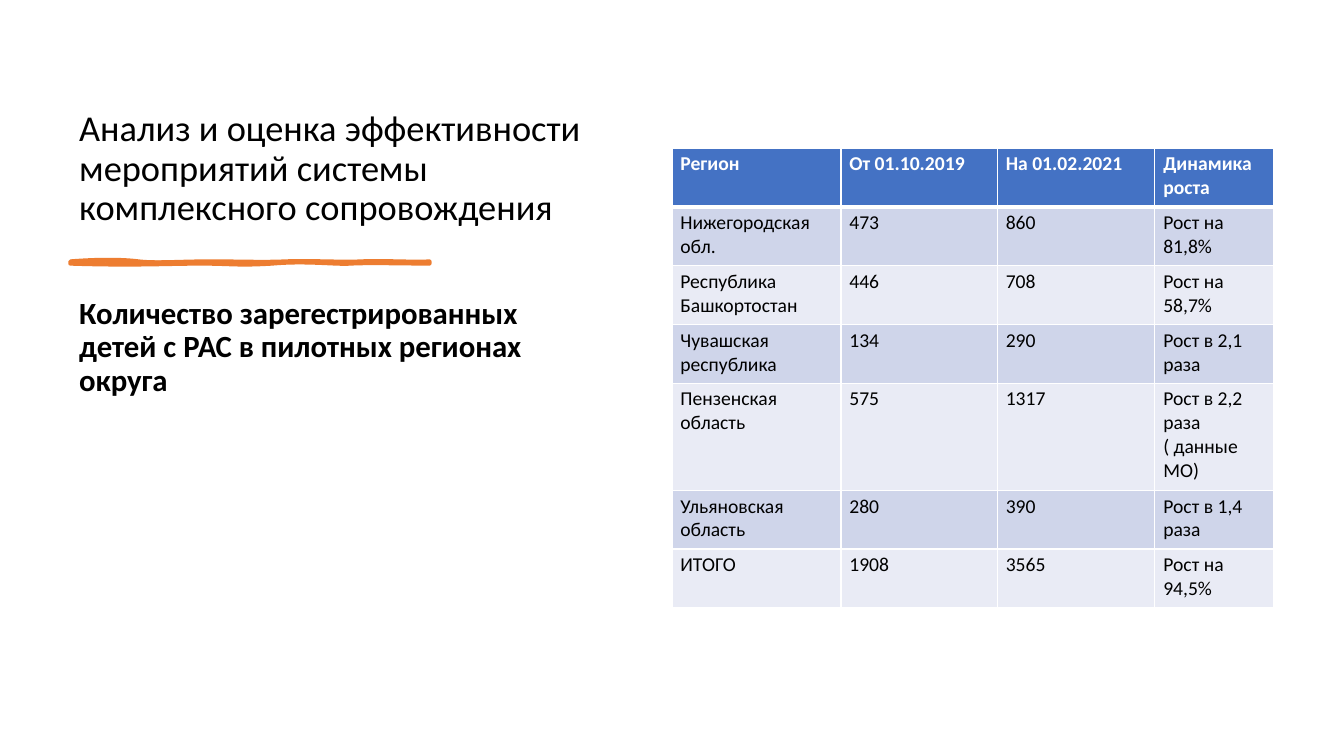
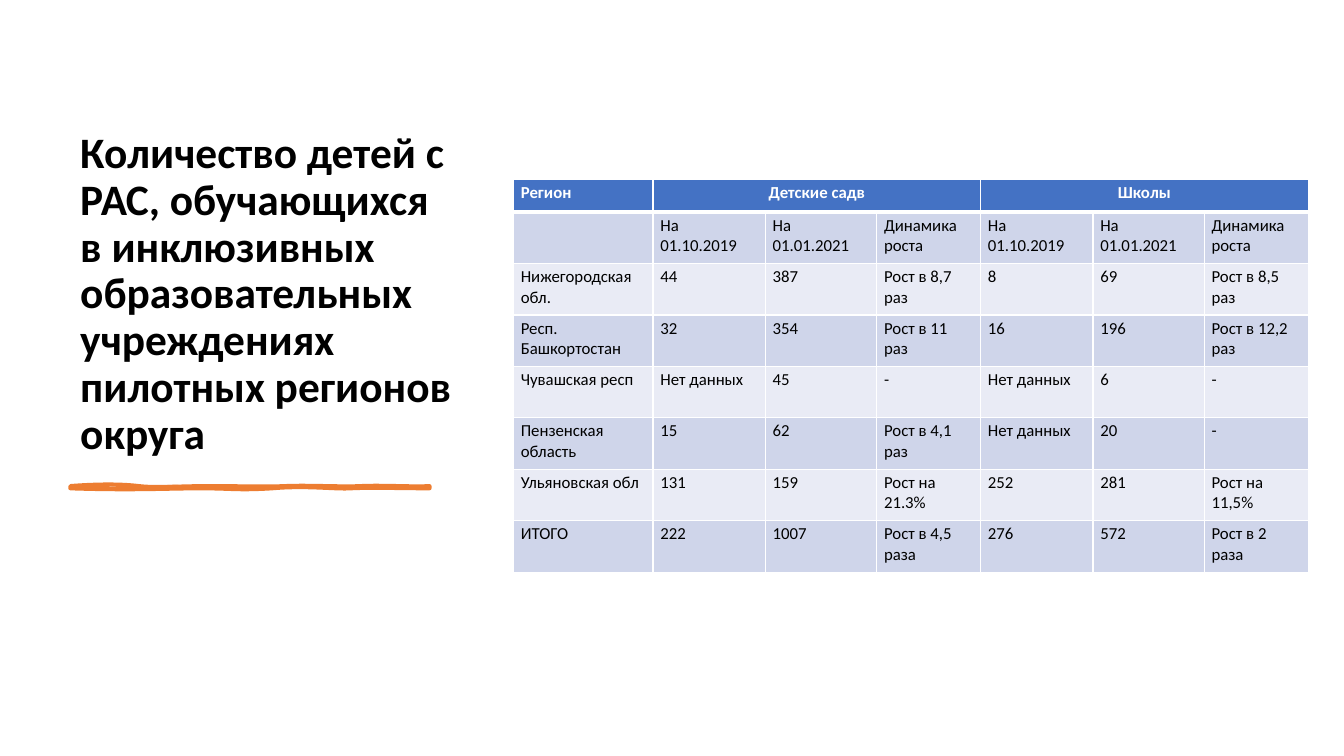
from dataclasses import dataclass

import lxml.etree
import pptx
import pptx.dml.color
import pptx.enum.text
import pptx.oxml.ns
import pptx.presentation
import pptx.slide
import pptx.table
import pptx.util

PX = 9525
FONT = "Calibri"
COLORS = {
    "text": "000000",
    "white": "FFFFFF",
    "accent": "ED7D31",
    "header": "4472C4",
    "band_dark": "CFD5EA",
    "band_light": "E9EBF5",
}

Point = tuple[int, int]
Curve = tuple[int, int, int, int, int, int]


@dataclass(frozen=True)
class Box:
    left: int
    top: int
    width: int
    height: int


@dataclass(frozen=True)
class TextSpec:
    text: str
    box: Box
    size: int
    bold: bool = False
    bottom: bool = False
    space_before: int = 0


@dataclass(frozen=True)
class TableSpec:
    left: int
    top: int
    columns: list[int]
    heights: list[int]
    rows: list[list[str]]
    size: int
    margin_x: int
    margin_y: int
    header_spans: tuple[tuple[int, int], ...] = ()


@dataclass(frozen=True)
class Strand:
    upper: list[Curve]
    lower: list[Curve]
    hidden_part: dict[str, str]


@dataclass(frozen=True)
class SlideSpec:
    texts: list[TextSpec]
    underline_top: int
    table: TableSpec


UNDERLINE_LEFT = 67
UNDERLINE_WIDTH = 342
UNDERLINE_HEIGHT = 2
STRANDS = [
    Strand(
        [(26, -2, 49, -2, 65, 0), (82, 2, 103, 0, 133, 0), (164, 0, 182, 1, 205, 0),
         (228, -1, 258, 1, 277, 0), (297, -1, 328, 1, 342, 0)],
        [(324, 2, 282, 1, 267, 2), (252, 3, 225, -1, 192, 2), (158, 4, 155, 2, 124, 2),
         (92, 2, 60, 4, 0, 2)],
        {"fill": "none"},
    ),
    Strand(
        [(31, 2, 38, 0, 65, 0), (92, -1, 95, -2, 124, 0), (152, 2, 183, 1, 199, 0),
         (214, -1, 247, 3, 263, 0), (280, -2, 314, 3, 342, 0)],
        [(328, 1, 290, 4, 274, 2), (258, -1, 239, 2, 199, 2), (167, 1, 163, 1, 140, 2),
         (118, 3, 105, 1, 72, 2), (39, 2, 21, 1, 0, 2)],
        {"stroke": "0"},
    ),
]

PERIODS = ["На 01.10.2019", "На 01.01.2021", "Динамика роста"]
SLIDES = [
    SlideSpec(
        [
            TextSpec("Анализ и оценка эффективности мероприятий системы комплексного сопровождения",
                     Box(66, 67, 506, 155), 26, bottom=True),
            TextSpec("Количество зарегестрированных детей с РАС в пилотных регионах округа",
                     Box(66, 279, 506, 372), 22, bold=True, space_before=10),
        ],
        249,
        TableSpec(
            640, 141, [161, 149, 150, 113], [56] * 4 + [102] + [56] * 2,
            [
                ["Регион", "От 01.10.2019", "На 01.02.2021", "Динамика роста"],
                ["Нижегородская обл.", "473", "860", "Рост на 81,8%"],
                ["Республика Башкортостан", "446", "708", "Рост на 58,7%"],
                ["Чувашская республика", "134", "290", "Рост в 2,1 раза"],
                ["Пензенская область", "575", "1317", "Рост в 2,2 раза ( данные МО)"],
                ["Ульяновская область", "280", "390", "Рост в 1,4 раза"],
                ["ИТОГО", "1908", "3565", "Рост на 94,5%"],
            ],
            14, 8, 4,
        ),
    ),
    SlideSpec(
        [
            TextSpec("Количество детей с РАС, обучающихся в инклюзивных образовательных "
                     "учреждениях пилотных регионов округа",
                     Box(67, 67, 375, 375), 31, bold=True, bottom=True),
        ],
        463,
        TableSpec(
            489, 171, [133] + [107, 106, 99] * 2, [31] + [49] * 7,
            [
                ["Регион", "Детские садв", "", "", "Школы", "", ""],
                ["", *PERIODS, *PERIODS],
                ["Нижегородская обл.", "44", "387", "Рост в 8,7 раз", "8", "69", "Рост в 8,5 раз"],
                ["Респ. Башкортостан", "32", "354", "Рост в 11 раз", "16", "196", "Рост в 12,2 раз"],
                ["Чувашская респ", "Нет данных", "45", "-", "Нет данных", "6", "-"],
                ["Пензенская область", "15", "62", "Рост в 4,1 раз", "Нет данных", "20", "-"],
                ["Ульяновская обл", "131", "159", "Рост на 21.3%", "252", "281", "Рост на 11,5%"],
                ["ИТОГО", "222", "1007", "Рост в 4,5 раза", "276", "572", "Рост в 2 раза"],
            ],
            12, 7, 3, ((1, 3), (4, 6)),
        ),
    ),
]


def px(value: int) -> pptx.util.Emu:
    return pptx.util.Emu(value * PX)


def rgb(name: str) -> pptx.dml.color.RGBColor:
    return pptx.dml.color.RGBColor.from_string(COLORS[name])


def add_xml(parent, tag: str, **attributes: str):
    return lxml.etree.SubElement(parent, pptx.oxml.ns.qn(tag), **attributes)


def set_font(p, size: int, color: str, bold: bool) -> None:
    p.font.name = FONT
    p.font.size = pptx.util.Pt(size)
    p.font.bold = bold
    p.font.color.rgb = rgb(color)


def add_text(s: pptx.slide.Slide, spec: TextSpec) -> None:
    box = spec.box
    sp = s.shapes.add_textbox(px(box.left), px(box.top), px(box.width), px(box.height))
    tf = sp.text_frame
    tf.word_wrap = True
    anchor = pptx.enum.text.MSO_ANCHOR
    tf.vertical_anchor = anchor.BOTTOM if spec.bottom else anchor.TOP
    p = tf.paragraphs[0]
    p.text = spec.text
    p.line_spacing = 0.9
    p.space_before = pptx.util.Pt(spec.space_before)
    set_font(p, spec.size, "text", spec.bold)


def add_step(outline, tag: str, *points: Point) -> None:
    step = add_xml(outline, tag)
    for x, y in points:
        add_xml(step, "a:pt", x=str(x), y=str(y))


def add_curves(outline, curves: list[Curve]) -> None:
    for x1, y1, x2, y2, x3, y3 in curves:
        add_step(outline, "a:cubicBezTo", (x1, y1), (x2, y2), (x3, y3))


def add_underline(s: pptx.slide.Slide, top: int) -> None:
    width, height = UNDERLINE_WIDTH, UNDERLINE_HEIGHT
    builder = s.shapes.build_freeform(0, 0, scale=float(PX))
    builder.add_line_segments([(width, 0), (width, height), (0, height)], close=True)
    sp = builder.convert_to_shape(px(UNDERLINE_LEFT), px(top))
    sp.shadow.inherit = False
    sp.fill.solid()
    sp.fill.fore_color.rgb = rgb("accent")
    sp.line.color.rgb = rgb("accent")
    sp.line.width = pptx.util.Pt(3)
    add_xml(sp.line._get_or_add_ln(), "a:round")
    outlines = sp._element.find(".//" + pptx.oxml.ns.qn("a:pathLst"))
    for child in list(outlines):
        outlines.remove(child)
    for strand in STRANDS:
        outline = add_xml(outlines, "a:path", w=str(width), h=str(height), **strand.hidden_part)
        add_step(outline, "a:moveTo", (0, 0))
        add_curves(outline, strand.upper)
        add_step(outline, "a:lnTo", (width, height))
        add_curves(outline, strand.lower)
        add_xml(outline, "a:close")


def set_borders(cell: pptx.table._Cell, widths: dict[str, int]) -> None:
    tc_pr = cell._tc.get_or_add_tcPr()
    for side, width in widths.items():
        ln = add_xml(tc_pr, f"a:ln{side}", w=str(pptx.util.Pt(width)))
        add_xml(add_xml(ln, "a:solidFill"), "a:srgbClr", val=COLORS["white"])


def style_cell(cell: pptx.table._Cell, text: str, row: int, spec: TableSpec) -> None:
    header = row == 0
    cell.margin_left = cell.margin_right = px(spec.margin_x)
    cell.margin_top = cell.margin_bottom = px(spec.margin_y)
    set_borders(cell, {"L": 1, "R": 1, "T": 3 if row == 1 else 1, "B": 3 if header else 1})
    cell.fill.solid()
    band = "band_dark" if row % 2 else "band_light"
    cell.fill.fore_color.rgb = rgb("header" if header else band)
    p = cell.text_frame.paragraphs[0]
    if text:
        p.text = text
    set_font(p, spec.size, "white" if header else "text", header)


def add_table(s: pptx.slide.Slide, spec: TableSpec) -> None:
    frame = s.shapes.add_table(
        len(spec.rows), len(spec.columns), px(spec.left), px(spec.top),
        px(sum(spec.columns)), px(sum(spec.heights)),
    )
    table = frame.table
    table.horz_banding = False
    for column, width in zip(table.columns, spec.columns):
        column.width = px(width)
    for row, height in zip(table.rows, spec.heights):
        row.height = px(height)
    for i, texts in enumerate(spec.rows):
        for j, text in enumerate(texts):
            style_cell(table.cell(i, j), text, i, spec)
    for first, last in spec.header_spans:
        cell = table.cell(0, first)
        cell.merge(table.cell(0, last))
        cell.text_frame.paragraphs[0].alignment = pptx.enum.text.PP_ALIGN.CENTER


def add_slide(prs: pptx.presentation.Presentation, spec: SlideSpec) -> None:
    s = prs.slides.add_slide(prs.slide_layouts[6])
    for text in spec.texts:
        add_text(s, text)
    add_underline(s, spec.underline_top)
    add_table(s, spec.table)


def main() -> None:
    prs = pptx.Presentation()
    prs.slide_width, prs.slide_height = px(1280), px(720)
    for spec in SLIDES:
        add_slide(prs, spec)
    prs.save("out.pptx")


if __name__ == "__main__":
    main()
